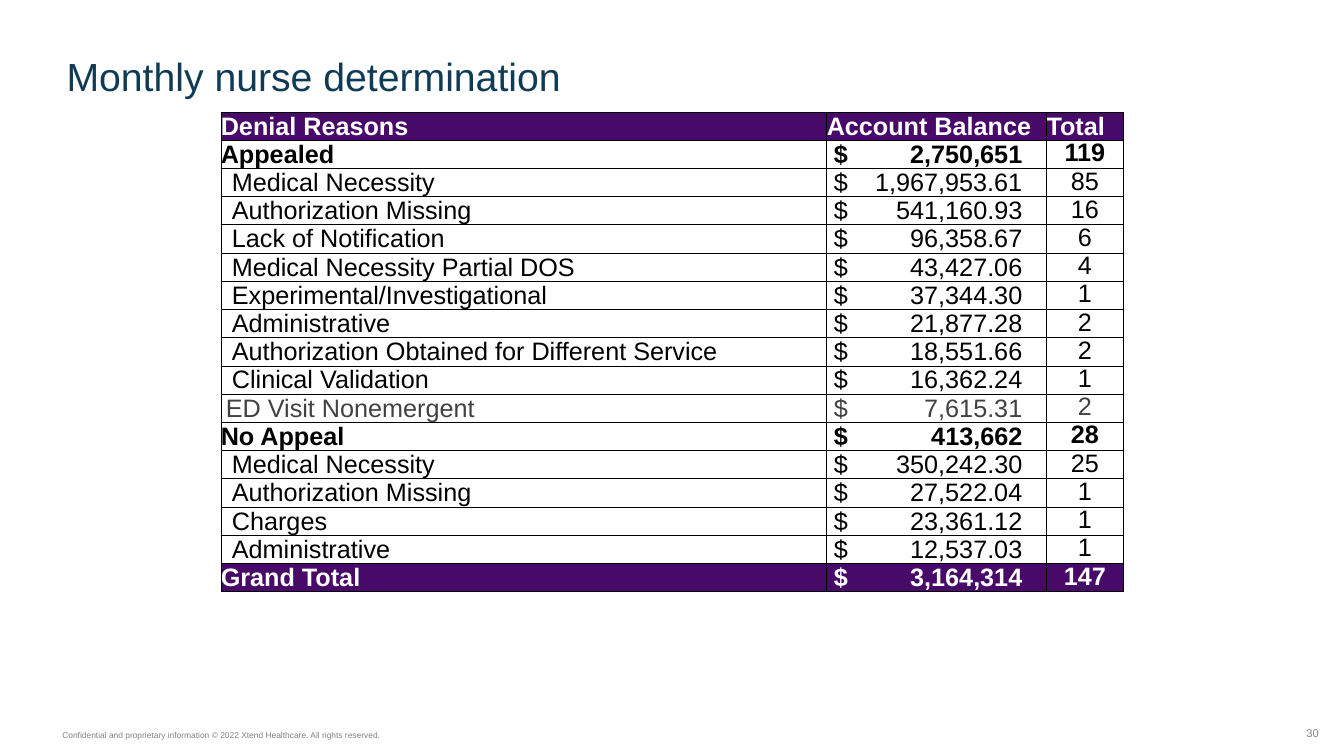
from lxml import etree
from pptx import Presentation
from pptx import util as u
from pptx.dml.color import RGBColor
from pptx.enum import text
from pptx.oxml.ns import qn

PURPLE, WHITE, BLACK, GREY = "470A68", "FFFFFF", "000000", "838383"


def style(paragraph, size, color, bold=False):
    font = paragraph.font
    font.name, font.size, font.bold = "Arial", u.Pt(size), bold
    font.color.rgb = RGBColor.from_string(color)


def add_border(cell):
    properties = cell._tc.get_or_add_tcPr()
    for position, side in enumerate(("lnL", "lnR", "lnT", "lnB")):
        line = etree.Element(qn("a:" + side), w="6350")
        fill = etree.SubElement(line, qn("a:solidFill"))
        etree.SubElement(fill, qn("a:srgbClr"), val=BLACK)
        properties.insert(position, line)


deck = Presentation()
deck.slide_width, deck.slide_height = u.Inches(13.33), u.Inches(7.5)
page = deck.slides.add_slide(deck.slide_layouts[6])

labels = [
    ("30", 12.32, 7.16, 0.76, 0.27, 8, GREY, text.PP_ALIGN.RIGHT, 0, True),
    ("Confidential and proprietary information © 2022 Xtend Healthcare. All rights reserved.",
     0.52, 7.19, 3.43, 0.2, 6, GREY, text.PP_ALIGN.LEFT, 0.1, False),
    ("Monthly nurse determination", 0.66, 0.47, 8.62, 0.64, 28, "0F3B57",
     text.PP_ALIGN.LEFT, 0, True),
]
for wording, left, top, width, height, size, color, align, inset, wrap in labels:
    box = page.shapes.add_textbox(u.Inches(left), u.Inches(top), u.Inches(width), u.Inches(height))
    frame = box.text_frame
    frame.word_wrap = wrap
    frame.margin_left = frame.margin_right = u.Inches(inset)
    frame.vertical_anchor = text.MSO_ANCHOR.TOP
    para = frame.paragraphs[0]
    para.text, para.alignment = wording, align
    style(para, size, color)

rows = [
    ("Denial Reasons", "Account Balance", "Total"),
    ("Appealed", "2,750,651", "119"),
    ("Medical Necessity", "1,967,953.61", "85"),
    ("Authorization Missing", "541,160.93", "16"),
    ("Lack of Notification", "96,358.67", "6"),
    ("Medical Necessity Partial DOS", "43,427.06", "4"),
    ("Experimental/Investigational", "37,344.30", "1"),
    ("Administrative", "21,877.28", "2"),
    ("Authorization Obtained for Different Service", "18,551.66", "2"),
    ("Clinical Validation", "16,362.24", "1"),
    ("ED Visit Nonemergent", "7,615.31", "2"),
    ("No Appeal", "413,662", "28"),
    ("Medical Necessity", "350,242.30", "25"),
    ("Authorization Missing", "27,522.04", "1"),
    ("Charges", "23,361.12", "1"),
    ("Administrative", "12,537.03", "1"),
    ("Grand Total", "3,164,314", "147"),
]
row_height = u.Inches(0.28)
table = page.shapes.add_table(len(rows), 3, u.Inches(2.19), u.Inches(1.11),
                              u.Inches(8.95), row_height * len(rows)).table
for column, width in zip(table.columns, (6.01, 2.18, 0.76)):
    column.width = u.Inches(width)

for row_index, values in enumerate(rows):
    table.rows[row_index].height = row_height
    reason = values[0]
    header = row_index == 0
    banner = header or reason == "Grand Total"
    bold = banner or reason in ("Appealed", "No Appeal")
    muted = reason == "ED Visit Nonemergent"
    color = WHITE if banner else "414141" if muted else BLACK
    indents = (0 if bold else 0.05 if muted else 0.11, 0 if header else 0.07, 0)
    for column_index, value in enumerate(values):
        cell = table.cell(row_index, column_index)
        cell.margin_left = u.Inches(indents[column_index])
        cell.margin_right = cell.margin_top = cell.margin_bottom = 0
        cell.vertical_anchor = text.MSO_ANCHOR.BOTTOM
        cell.fill.solid()
        cell.fill.fore_color.rgb = RGBColor.from_string(PURPLE if banner else WHITE)
        add_border(cell)
        para = cell.text_frame.paragraphs[0]
        para.text = value
        para.line_spacing = 0.9
        if column_index == 1 and not header:
            para.text = "$\t" + value
            tabs = etree.SubElement(para._p.get_or_add_pPr(), qn("a:tabLst"))
            etree.SubElement(tabs, qn("a:tab"), pos=str(u.Inches(1.87)), algn="r")
        if column_index == 2 and not header:
            para.alignment = text.PP_ALIGN.CENTER
            cell.vertical_anchor = text.MSO_ANCHOR.MIDDLE
        style(para, 18, color, bold)

deck.save("out.pptx")
